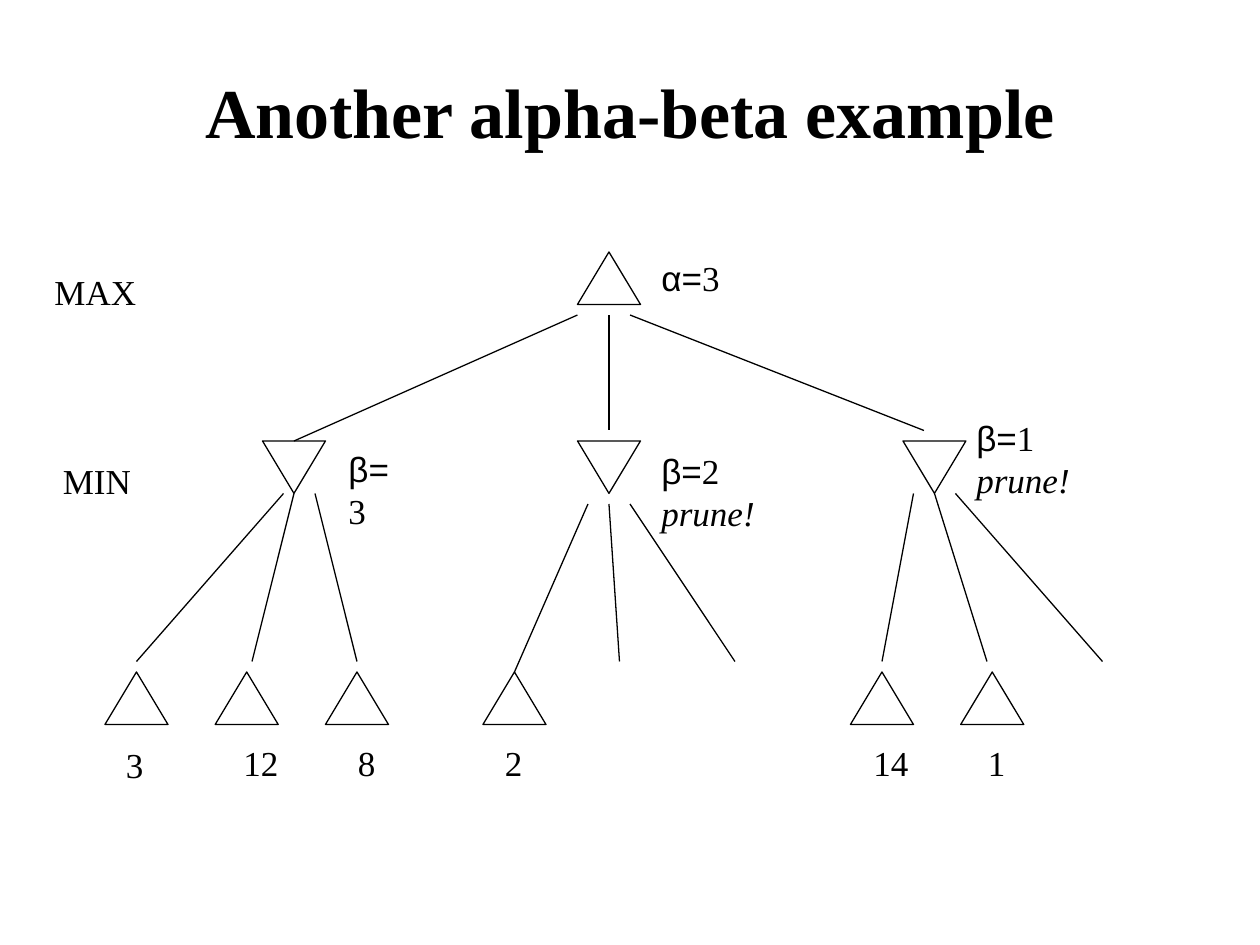
from lxml.etree import SubElement
from pptx import Presentation
from pptx.dml.color import RGBColor
from pptx.enum.shapes import MSO_CONNECTOR, MSO_SHAPE
from pptx.enum.text import MSO_ANCHOR, MSO_AUTO_SIZE, PP_ALIGN
from pptx.oxml.ns import qn
from pptx.util import Inches, Pt

# All positions are columns and rows of a grid with 12 cells to the inch.
CELLS_PER_INCH = 12
COLUMNS, ROWS = 120, 90
NODE_WIDTH, NODE_HEIGHT = 6, 5
BLACK, WHITE = "000000", "FFFFFF"
SERIF, SANS = "Times New Roman", "Arial"

MAX_ROW, MIN_ROW, LEAF_ROW = 24, 42, 64
MAX_NODES = [55]
MIN_NODES = [25, 55, 86]
LEAF_NODES = [10, 20.5, 31, 46, 81, 91.5]

# Each branch: start column, start row, end column, end row
BRANCHES = [
    (55, 30, 28, 42), (58, 30, 58, 41), (60, 30, 88, 41),
    (27, 47, 13, 63), (28, 47, 24, 63), (30, 47, 34, 63),
    (56, 48, 49, 64), (58, 48, 59, 63), (60, 48, 70, 63),
    (87, 47, 84, 63), (89, 47, 94, 63), (91, 47, 105, 63),
]

# Each label: text, left, top, width
PLAIN_LABELS = [
    ("MAX", 4, 25.2, 10.2), ("MIN", 4.8, 43.2, 8.9),
    ("3", 10.8, 70.2, 4.1), ("12", 22, 70, 5.8), ("8", 32.9, 70, 4.1),
    ("2", 46.9, 70, 4.1), ("14", 82, 70, 5.8), ("1", 92.9, 70, 4.1),
]

# Each bound: symbol, value, note, left, top, width, wrap
BOUNDS = [
    ("α=", "3", "", 61.8, 23.8, 8, False),
    ("β=", "3", "", 32, 42, 7.8, True),
    ("β=", "2", "prune!", 61.8, 42.2, 11.4, False),
    ("β=", "1", "prune!", 91.8, 39.1, 17.2, True),
]


def cells(count):
    return Inches(count / CELLS_PER_INCH)


def color(hex_string):
    return RGBColor.from_string(hex_string)


def add_run(paragraph, text, font=SERIF, size=20, bold=False, italic=False):
    run = paragraph.add_run()
    run.text = text
    run.font.name = font
    run.font.size = Pt(size)
    run.font.bold = bold
    run.font.italic = italic
    run.font.color.rgb = color(BLACK)


def add_text_box(slide, left, top, width, height=5.2, wrap=False):
    """Add an empty text box and return its first paragraph."""
    box = slide.shapes.add_textbox(*map(cells, (left, top, width, height)))
    box.text_frame.word_wrap = wrap
    box.text_frame.auto_size = MSO_AUTO_SIZE.SHAPE_TO_FIT_TEXT
    return box.text_frame.paragraphs[0]


def add_title(slide, text):
    box = slide.shapes.add_textbox(*map(cells, (9, 3, COLUMNS - 18, 15)))
    box.text_frame.word_wrap = True
    box.text_frame.vertical_anchor = MSO_ANCHOR.MIDDLE
    paragraph = box.text_frame.paragraphs[0]
    paragraph.alignment = PP_ALIGN.CENTER
    add_run(paragraph, text, size=40, bold=True)


def add_node(slide, left, top, inverted=False):
    shape = slide.shapes.add_shape(
        MSO_SHAPE.ISOSCELES_TRIANGLE,
        *map(cells, (left, top, NODE_WIDTH, NODE_HEIGHT)))
    shape.shadow.inherit = False
    shape.fill.solid()
    shape.fill.fore_color.rgb = color(WHITE)
    shape.line.color.rgb = color(BLACK)
    shape.line.width = Pt(0.75)
    if inverted:
        shape.element.spPr.get_or_add_xfrm().set("flipV", "1")


def add_branch(slide, *ends):
    connector = slide.shapes.add_connector(
        MSO_CONNECTOR.STRAIGHT, *map(cells, ends))
    connector.line.color.rgb = color(BLACK)
    connector.line.width = Pt(0.75)
    SubElement(connector.element.spPr, qn("a:effectLst"))


def add_bound(slide, symbol, value, note, left, top, width, wrap):
    """Add an alpha or beta value, with an italic note on a second line."""
    height = 9.2 if note else 5.3
    paragraph = add_text_box(slide, left, top, width, height, wrap)
    add_run(paragraph, symbol, font=SANS)
    add_run(paragraph, value)
    if note:
        paragraph.add_line_break()
        add_run(paragraph, note, italic=True)


def main():
    presentation = Presentation()
    presentation.slide_width = cells(COLUMNS)
    presentation.slide_height = cells(ROWS)
    slide = presentation.slides.add_slide(presentation.slide_layouts[6])

    add_title(slide, "Another alpha-beta example")
    levels = [(MAX_ROW, MAX_NODES), (MIN_ROW, MIN_NODES), (LEAF_ROW, LEAF_NODES)]
    for row, columns in levels:
        for column in columns:
            add_node(slide, column, row, inverted=row == MIN_ROW)
    for branch in BRANCHES:
        add_branch(slide, *branch)
    for text, left, top, width in PLAIN_LABELS:
        add_run(add_text_box(slide, left, top, width), text)
    for bound in BOUNDS:
        add_bound(slide, *bound)

    presentation.save("out.pptx")


if __name__ == "__main__":
    main()
